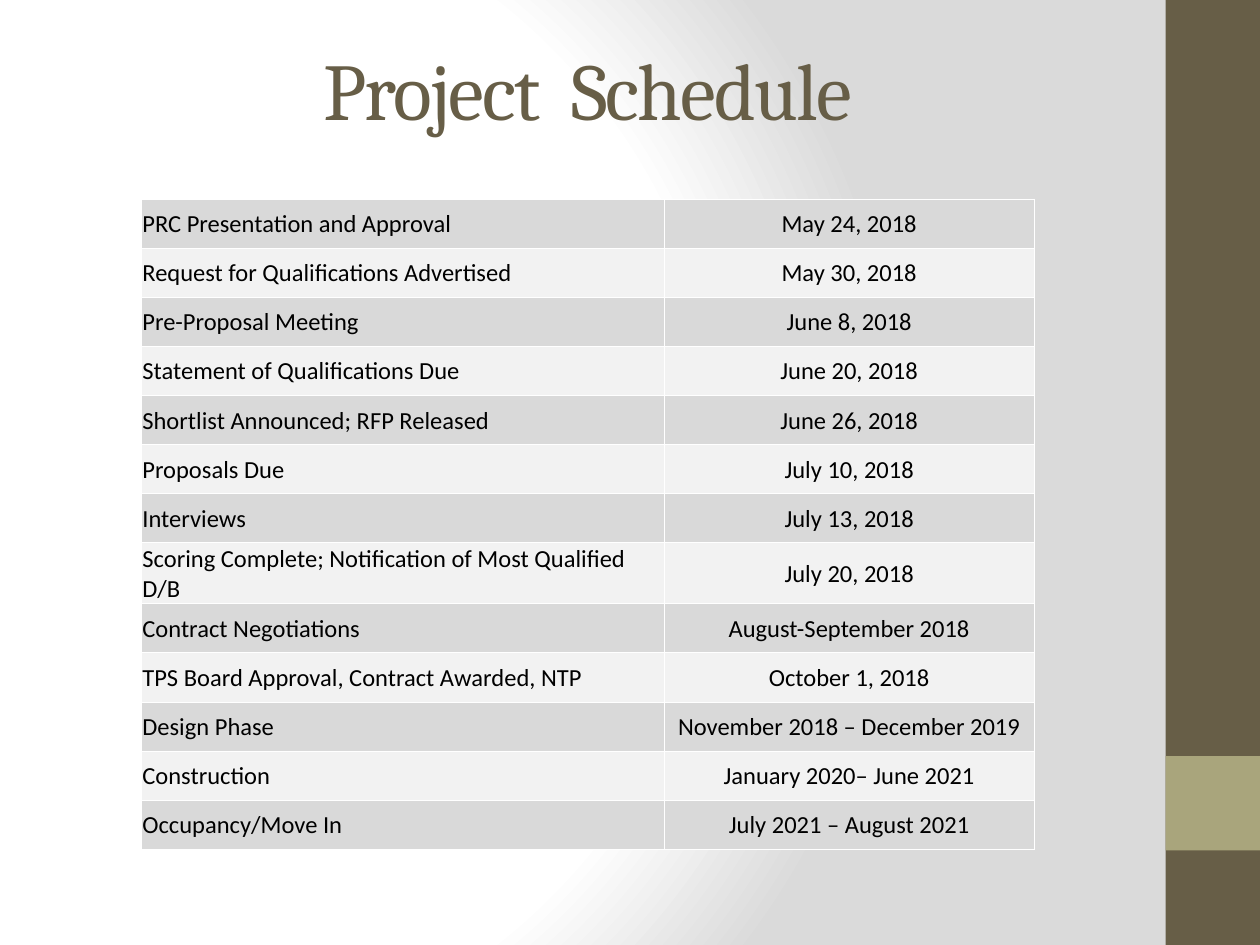
"""Build the project schedule slide."""
from typing import NamedTuple

from pptx import Presentation
from pptx.dml.color import RGBColor
from pptx.enum.shapes import MSO_SHAPE as Preset
from pptx.enum.text import MSO_ANCHOR as Anchor, MSO_AUTO_SIZE as AutoSize, PP_ALIGN as Align
from pptx.oxml import parse_xml
from pptx.oxml.ns import nsdecls, qn
from pptx.util import Pt

EMU_PER_PX = 9144
COLORS = {
    "brown": "675E47",
    "olive": "A9A57C",
    "white": "FFFFFF",
    "grey": "DADADA",
    "odd_row": "D9D9D9",
    "even_row": "F2F2F2",
    "text": "000000",
}
COLUMN_WIDTHS = (415, 294)
COLUMN_ALIGNS = (Align.LEFT, Align.CENTER)
ROW_HEIGHT = 39


class Band(NamedTuple):
    top: int
    height: int
    color: str


class Milestone(NamedTuple):
    task: str
    date: str


BANDS = (Band(0, 750, "brown"), Band(600, 75, "olive"))
MILESTONES = (
    Milestone("PRC Presentation and Approval", "May 24, 2018"),
    Milestone("Request for Qualifications Advertised", "May 30, 2018"),
    Milestone("Pre-Proposal Meeting", "June 8, 2018"),
    Milestone("Statement of Qualifications Due", "June 20, 2018"),
    Milestone("Shortlist Announced; RFP Released", "June 26, 2018"),
    Milestone("Proposals Due", "July 10, 2018"),
    Milestone("Interviews", "July 13, 2018"),
    Milestone("Scoring Complete; Notification of Most Qualified D/B", "July 20, 2018"),
    Milestone("Contract Negotiations", "August-September 2018"),
    Milestone("TPS Board Approval, Contract Awarded, NTP", "October 1, 2018"),
    Milestone("Design Phase", "November 2018 – December 2019"),
    Milestone("Construction", "January 2020– June 2021"),
    Milestone("Occupancy/Move In", "July 2021 – August 2021"),
)


def px(length: int) -> int:
    return length * EMU_PER_PX


def rgb(name: str) -> RGBColor:
    return RGBColor.from_string(COLORS[name])


def add_run(paragraph, text: str, font: str, size: int, color: str):
    run = paragraph.add_run()
    run.text = text
    run.font.name = font
    run.font.size = Pt(size)
    run.font.color.rgb = rgb(color)
    return run


def paint_background(slide) -> None:
    stops = "".join(
        f'<a:gs pos="{percent * 1000}"><a:srgbClr val="{COLORS[color]}"/></a:gs>'
        for percent, color in ((0, "white"), (75, "white"), (100, "grey"))
    )
    background = parse_xml(
        f'<p:bg {nsdecls("p", "a")}><p:bgPr><a:gradFill rotWithShape="1">'
        f'<a:gsLst>{stops}</a:gsLst><a:path path="circle">'
        '<a:fillToRect l="20000" t="50000" r="100000" b="50000"/></a:path>'
        '</a:gradFill><a:effectLst/></p:bgPr></p:bg>'
    )
    slide.element.find(qn("p:cSld")).insert(0, background)


def add_band(slide, band: Band) -> None:
    stripe = slide.shapes.add_shape(
        Preset.RECTANGLE, px(925), px(band.top), px(75), px(band.height))
    stripe.shadow.inherit = False
    stripe.fill.solid()
    stripe.fill.fore_color.rgb = rgb(band.color)
    stripe.line.fill.background()


def write_title(slide, text: str) -> None:
    title = slide.shapes.title
    title.left, title.top, title.width, title.height = px(50), px(8), px(833), px(125)
    frame = title.text_frame
    frame.auto_size = AutoSize.NONE
    frame.word_wrap = True
    frame.vertical_anchor = Anchor.MIDDLE
    heading = frame.paragraphs[0]
    heading.alignment = Align.CENTER
    run = add_run(heading, text, "Cambria", 46, "brown")
    run.font._element.set("spc", "-100")


def fill_cell(cell, text: str, align: Align, color: str) -> None:
    cell.margin_left = cell.margin_top = cell.margin_right = px(1)
    cell.margin_bottom = 0
    cell.vertical_anchor = Anchor.MIDDLE
    properties = cell._tc.get_or_add_tcPr()
    for side in ("lnL", "lnR", "lnT", "lnB"):
        properties.append(parse_xml(
            f'<a:{side} {nsdecls("a")} w="{Pt(0.5)}"><a:solidFill>'
            f'<a:srgbClr val="{COLORS["white"]}"/></a:solidFill></a:{side}>'
        ))
    cell.fill.solid()
    cell.fill.fore_color.rgb = rgb(color)
    paragraph = cell.text_frame.paragraphs[0]
    paragraph.alignment = align
    add_run(paragraph, text, "Calibri", 14, "text")


def add_schedule(slide, milestones: tuple[Milestone, ...]) -> None:
    schedule = slide.shapes.add_table(
        len(milestones), len(COLUMN_WIDTHS), px(112), px(158),
        px(sum(COLUMN_WIDTHS)), px(ROW_HEIGHT * len(milestones))).table
    schedule.first_row = False
    schedule.horz_banding = False
    for column, width in zip(schedule.columns, COLUMN_WIDTHS):
        column.width = px(width)
    for index, (row, milestone) in enumerate(zip(schedule.rows, milestones)):
        row.height = px(ROW_HEIGHT)
        color = "even_row" if index % 2 else "odd_row"
        for cell, text, align in zip(row.cells, milestone, COLUMN_ALIGNS):
            fill_cell(cell, text, align, color)


def main() -> None:
    deck = Presentation()
    deck.slide_width, deck.slide_height = px(1000), px(750)
    slide = deck.slides.add_slide(deck.slide_layouts[5])
    paint_background(slide)
    for band in BANDS:
        add_band(slide, band)
    write_title(slide, "Project  Schedule")
    add_schedule(slide, MILESTONES)
    deck.save("out.pptx")


if __name__ == "__main__":
    main()
